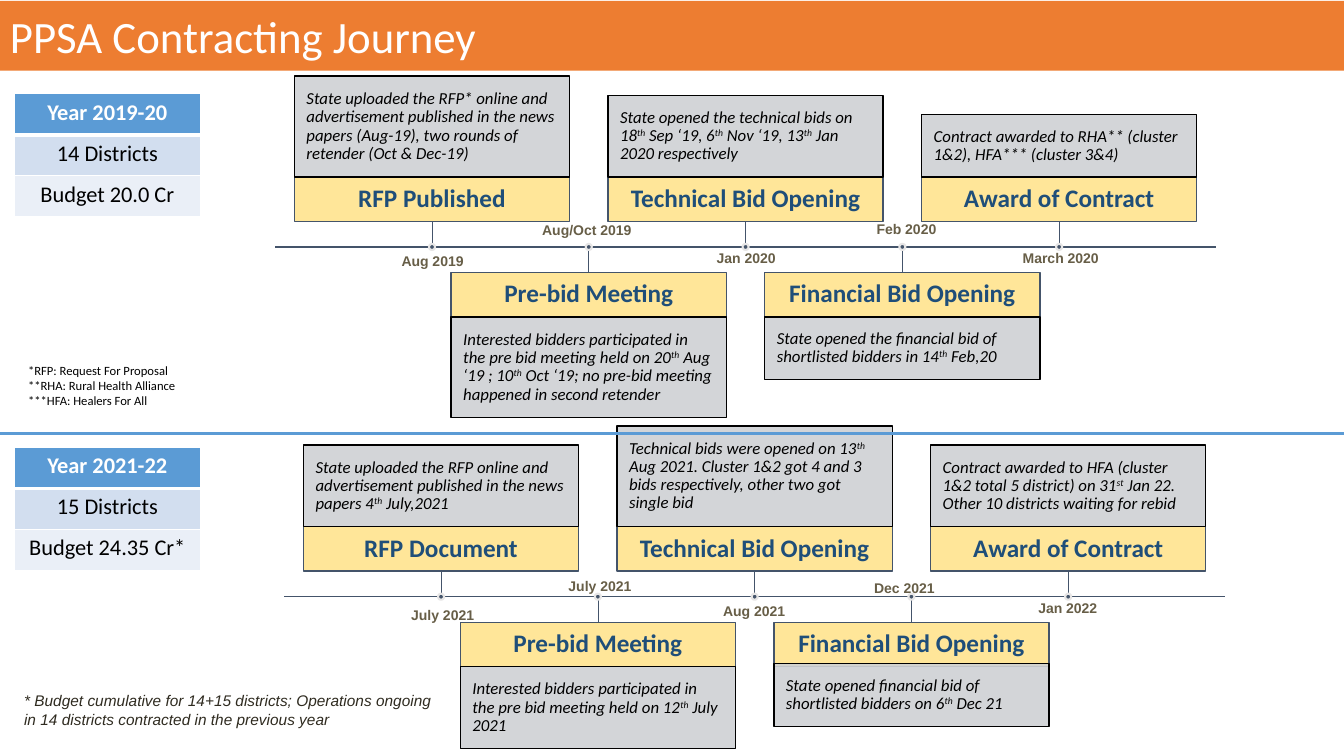
from dataclasses import dataclass

from lxml.etree import SubElement
from pptx import Presentation
from pptx.dml.color import RGBColor
from pptx.enum.shapes import MSO_CONNECTOR, MSO_SHAPE
from pptx.enum.text import MSO_ANCHOR, PP_ALIGN
from pptx.oxml.ns import qn
from pptx.util import Inches, Pt

COLORS = {
    "banner": "ED7D31", "white": "FFFFFF", "black": "000000", "axis": "44546A",
    "label": "FFE699", "label_text": "1F4E79", "detail": "CFD1D4", "halo": "E7E6E6",
    "date": "675E47", "note": "2F2B20", "blue": "5B9BD5", "band": "D2DEEF", "pale": "EAEFF7",
}
BOX_WIDTH = 2.73
LABEL_HEIGHT = 0.44
STEM = 0.255
STEP = 1.555
DOT = 0.06


@dataclass
class Stage:
    label: str
    detail: str
    lines: int
    date: str
    date_center: float
    date_top: float
    overlap: float = 0


FIRST_ROUND = [
    Stage("RFP Published", "State uploaded the RFP* online and advertisement published in the news papers "
          "(Aug-19), two rounds of retender (Oct & Dec-19)", 4, "Aug 2019", 4.29, 2.45),
    Stage("Pre-bid Meeting", "Interested bidders participated in the pre bid meeting held on 20^th^ Aug ‘19 ; "
          "10^th^ Oct ‘19; no pre-bid meeting happened in second retender", 4, "Aug/Oct 2019", 5.82, 2.15),
    Stage("Technical Bid Opening", "State opened the technical bids on 18^th^ Sep ‘19, 6^th^ Nov ‘19, "
          "13^th^ Jan 2020 respectively", 3, "Jan 2020", 7.4, 2.42),
    Stage("Financial Bid Opening", "State opened the financial bid of shortlisted bidders in 14^th^ Feb,20",
          2, "Feb 2020", 8.99, 2.14),
    Stage("Award of Contract", "Contract awarded to RHA** (cluster 1&2), HFA*** (cluster 3&4)",
          2, "March 2020", 10.52, 2.42),
]
SECOND_ROUND = [
    Stage("RFP Document", "State uploaded the RFP online and advertisement published in the news papers "
          "4^th^ July,2021", 3, "July 2021", 4.39, 5.97),
    Stage("Pre-bid Meeting", "Interested bidders participated in the pre bid meeting held on 12^th^ July 2021",
          3, "July 2021", 5.95, 5.68),
    Stage("Technical Bid Opening", "Technical bids were opened on 13^th^ Aug 2021. Cluster 1&2 got 4 and 3 bids "
          "respectively, other two got single bid", 4, "Aug 2021", 7.48, 5.93),
    Stage("Financial Bid Opening", "State opened financial bid of shortlisted bidders on 6^th^ Dec 21",
          2, "Dec 2021", 8.97, 5.7, 0.03),
    Stage("Award of Contract", "Contract awarded to HFA (cluster 1&2 total 5 district) on 31^st^ Jan 22. "
          "Other 10 districts waiting for rebid", 3, "Jan 2022", 10.59, 5.9),
]


def color(name):
    return RGBColor.from_string(COLORS[name])


def write(para, text, size, ink, font="Calibri", bold=False, italic=False, align=PP_ALIGN.LEFT):
    para.alignment = align
    for index, part in enumerate(text.split("^")):
        span = para.add_run()
        span.text = part
        span.font.size = Pt(size)
        span.font.name = font
        span.font.bold = bold
        span.font.italic = italic
        span.font.color.rgb = color(ink)
        if index % 2:
            span.font._element.set("baseline", "30000")


def set_opacity(fill_format, percent):
    solid = fill_format._xPr.find(qn("a:solidFill"))
    SubElement(solid[0], qn("a:alpha"), val=str(percent * 1000))


def add_box(shapes, kind, left, top, width, height, fill, line=None, weight=1.0):
    box = shapes.add_shape(kind, Inches(left), Inches(top), Inches(width), Inches(height))
    box.shadow.inherit = False
    box.fill.solid()
    box.fill.fore_color.rgb = color(fill)
    if line:
        box.line.color.rgb = color(line)
        box.line.width = Pt(weight)
    else:
        box.line.fill.background()
    return box


def prepare_frame(box, inset):
    frame = box.text_frame
    frame.word_wrap = True
    frame.vertical_anchor = MSO_ANCHOR.MIDDLE
    frame.margin_left = frame.margin_right = frame.margin_top = frame.margin_bottom = Inches(inset)
    para = frame.paragraphs[0]
    para.line_spacing = 0.9
    return para


def add_line(shapes, start, end, ink, weight):
    line = shapes.add_connector(MSO_CONNECTOR.STRAIGHT, *(Inches(value) for value in (*start, *end)))
    line.line.color.rgb = color(ink)
    line.line.width = Pt(weight)
    SubElement(line._element.spPr, qn("a:effectLst"))


def add_text(page, left, top, width, height, lines, wrap=True, anchor=MSO_ANCHOR.TOP, **style):
    box = page.shapes.add_textbox(Inches(left), Inches(top), Inches(width), Inches(height))
    frame = box.text_frame
    frame.word_wrap = wrap
    frame.vertical_anchor = anchor
    for index, text in enumerate(lines):
        para = frame.add_paragraph() if index else frame.paragraphs[0]
        write(para, text, **style)


def add_stage(shapes, stage, left, axis, above):
    center = left + BOX_WIDTH / 2
    height = 0.24 + 0.19 * stage.lines
    label_top = axis - STEM - LABEL_HEIGHT if above else axis + STEM
    detail_top = label_top - height if above else label_top + LABEL_HEIGHT - stage.overlap
    label = add_box(shapes, MSO_SHAPE.RECTANGLE, left, label_top, BOX_WIDTH, LABEL_HEIGHT, "label", "axis")
    write(prepare_frame(label, 0.1), stage.label, 18, "label_text", bold=True, align=PP_ALIGN.CENTER)
    detail = add_box(shapes, MSO_SHAPE.RECTANGLE, left, detail_top, BOX_WIDTH, height, "detail", "black")
    set_opacity(detail.fill, 90)
    write(prepare_frame(detail, 0.12), stage.detail, 12, "black", italic=True)
    add_line(shapes, (center, axis), (center, axis - STEM if above else axis + STEM), "axis", 0.5)
    add_box(shapes, MSO_SHAPE.OVAL, center - DOT / 2, axis - DOT / 2, DOT, DOT, "axis", "halo", 1.5)


def add_timeline(page, left, axis, stages):
    shapes = page.shapes.add_group_shape().shapes
    add_line(shapes, (left - 0.19, axis), (left + 9.14, axis), "axis", 1)
    for index, stage in enumerate(stages):
        add_stage(shapes, stage, left + index * STEP, axis, index % 2 == 0)
    for stage in stages:
        add_text(page, stage.date_center - 0.55, stage.date_top, 1.1, 0.27, [stage.date], wrap=False,
                 anchor=MSO_ANCHOR.MIDDLE, size=10, ink="date", font="Arial", bold=True, align=PP_ALIGN.CENTER)


def set_borders(cell, bottom):
    properties = cell._tc.get_or_add_tcPr()
    for index, (side, weight) in enumerate((("lnL", 1), ("lnR", 1), ("lnT", 1), ("lnB", bottom))):
        border = properties.makeelement(qn(f"a:{side}"), {"w": str(Pt(weight))})
        fill = SubElement(border, qn("a:solidFill"))
        SubElement(fill, qn("a:srgbClr"), val=COLORS["white"])
        properties.insert(index, border)


def add_year_table(page, top, rows):
    table = page.shapes.add_table(3, 1, Inches(0.14), Inches(top), Inches(1.85), Inches(1.22)).table
    for index, (text, fill) in enumerate(zip(rows, ("blue", "band", "pale"))):
        header = index == 0
        cell = table.cell(index, 0)
        cell.fill.solid()
        cell.fill.fore_color.rgb = color(fill)
        set_borders(cell, 3 if header else 1)
        write(cell.text_frame.paragraphs[0], text, 16, "white" if header else "black",
              bold=header, align=PP_ALIGN.CENTER)


def main():
    deck = Presentation()
    deck.slide_width, deck.slide_height = Inches(13.33), Inches(7.5)
    page = deck.slides.add_slide(deck.slide_layouts[6])
    banner = add_box(page.shapes, MSO_SHAPE.RECTANGLE, 0, 0.01, 13.33, 0.69, "banner")
    title = prepare_frame(banner, 0.1)
    title.line_spacing = 1.0
    write(title, "PPSA Contracting Journey", 32, "white")
    add_timeline(page, 2.92, 2.45, FIRST_ROUND)
    add_timeline(page, 3.01, 5.92, SECOND_ROUND)
    add_year_table(page, 0.93, ["Year 2019-20", "14 Districts", "Budget 20.0 Cr"])
    add_year_table(page, 4.44, ["Year 2021-22", "15 Districts", "Budget 24.35 Cr*"])
    add_line(page.shapes, (0, 4.3), (13.33, 4.3), "blue", 2.25)
    add_text(page, 0.18, 3.55, 2.29, 0.56,
             ["*RFP: Request For Proposal", "**RHA: Rural Health Alliance", "***HFA: Healers For All"],
             size=9, ink="black")
    add_text(page, 0.14, 6.81, 4.32, 0.47,
             ["* Budget cumulative for 14+15 districts; Operations ongoing in 14 districts "
              "contracted in the previous year"], size=11, ink="note", font="Arial", italic=True)
    deck.save("out.pptx")


if __name__ == "__main__":
    main()
